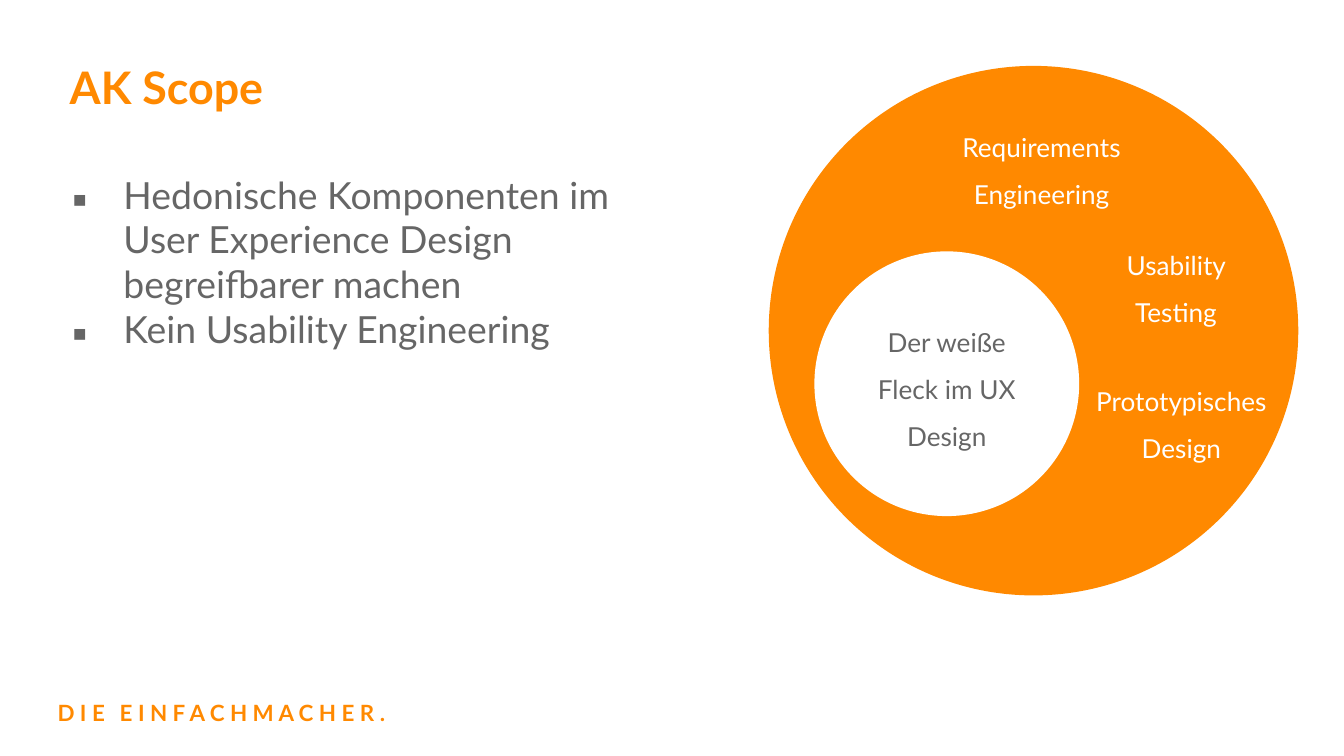
import pptx
import pptx.dml.color
import pptx.enum.shapes
import pptx.enum.text
import pptx.util
from lxml import etree

COLORS = {"orange": "FF8900", "gray": "666666", "white": "FFFFFF"}
ALIGN = pptx.enum.text.PP_ALIGN
ANCHOR = pptx.enum.text.MSO_ANCHOR


class Deck:
    font = "Lato"
    bullet_font = "Noto Sans Symbols"
    width = 10
    height = width * 9 / 16

    def __init__(self):
        self.prs = pptx.Presentation()
        self.prs.slide_width = pptx.util.Inches(self.width)
        self.prs.slide_height = pptx.util.Inches(self.height)
        self.s = self.prs.slides.add_slide(self.prs.slide_layouts[6])
        self.fill(self.s.background, "white")

    def fill(self, obj, color):
        obj.fill.solid()
        obj.fill.fore_color.rgb = self.rgb(color)

    def rgb(self, color):
        return pptx.dml.color.RGBColor.from_string(COLORS[color])

    def place(self, x, y, w, h):
        sx, sy = self.prs.slide_width / 100, self.prs.slide_height / 100
        return [round(v) for v in (x * sx, y * sy, w * sx, h * sy)]

    def circle(self, x, y, diameter, color):
        box = self.place(x, y, diameter, diameter * self.width / self.height)
        sp = self.s.shapes.add_shape(pptx.enum.shapes.MSO_SHAPE.OVAL, *box)
        sp.shadow.inherit = False
        self.fill(sp, color)
        sp.line.fill.background()

    def text(self, box, paragraphs, size, color, bold=False, inset=0.1,
             anchor=ANCHOR.TOP, bullet=None, **fmt):
        tf = self.s.shapes.add_textbox(*self.place(*box)).text_frame
        frame = {"word_wrap": True, "vertical_anchor": anchor,
                 "margin_top": pptx.util.Inches(inset),
                 "margin_bottom": pptx.util.Inches(inset),
                 "margin_left": pptx.util.Inches(0.1),
                 "margin_right": pptx.util.Inches(0.1)}
        for name, value in frame.items():
            setattr(tf, name, value)
        for i, lines in enumerate(paragraphs):
            p = tf.add_paragraph() if i else tf.paragraphs[0]
            for name, value in fmt.items():
                setattr(p, name, value)
            if bullet:
                self.bullet(p, bullet, color)
            for j, line in enumerate(lines):
                if j:
                    p.add_line_break()
                self.run(p, line, size, color, bold)
        return tf

    def run(self, p, text, size, color, bold=False):
        r = p.add_run()
        r.text = text
        style = {"name": self.font, "size": pptx.util.Pt(size), "bold": bold}
        for name, value in style.items():
            setattr(r.font, name, value)
        r.font.color.rgb = self.rgb(color)
        return r

    def bullet(self, p, char, color):
        pPr = p._p.get_or_add_pPr()
        indent = pptx.util.Inches(0.38)
        pPr.set("marL", str(indent))
        pPr.set("indent", str(-indent))
        ns = pptx.oxml.ns.qn
        clr = etree.SubElement(pPr, ns("a:buClr"))
        etree.SubElement(clr, ns("a:srgbClr"), val=COLORS[color])
        etree.SubElement(pPr, ns("a:buFont"), typeface=self.bullet_font)
        etree.SubElement(pPr, ns("a:buChar"), char=char)

    def label(self, box, text, color="white"):
        self.text(box, [[text]], 14, color, alignment=ALIGN.CENTER, line_spacing=1.5)

    def claim(self, box, first, second, size, color, gap):
        p = self.text(box, [[first]], size, color, bold=True).paragraphs[0]
        space = self.run(p, " ", size, color, bold=True)
        space._r.get_or_add_rPr().set("spc", str(round(gap * 100)))
        self.run(p, second, size, color, bold=True)


def main():
    deck = Deck()
    deck.claim((3.3, 90.75, 31, 7.3), "D I E", "E I N F A C H M A C H E R .",
               12, "orange", gap=5)
    deck.text((4.4, 21.85, 90.7, 61), 
              [["Hedonische Komponenten im ", "User Experience Design ",
                "begreifbarer machen"],
               ["Kein Usability Engineering"]],
              20, "gray", inset=0.05, bullet="▪")
    deck.text((4.2, 6.15, 91.1, 10.67), [["AK Scope"]], 24, "orange",
              bold=True, inset=0.05, anchor=ANCHOR.MIDDLE)
    deck.circle(57.2, 8.72, 39.4, "orange")
    deck.circle(60.6, 33.25, 19.7, "white")
    deck.label((63.8, 39.3, 13.3, 22.76), "Der weiße Fleck im UX Design", "gray")
    deck.label((69.1, 13.5, 16.8, 11.03), "Requirements Engineering")
    deck.label((79.9, 29.16, 15.2, 15.3), "Usability Testing")
    deck.label((80.3, 47.12, 15.2, 15.3), "Prototypisches Design")
    deck.prs.save("out.pptx")


if __name__ == "__main__":
    main()
